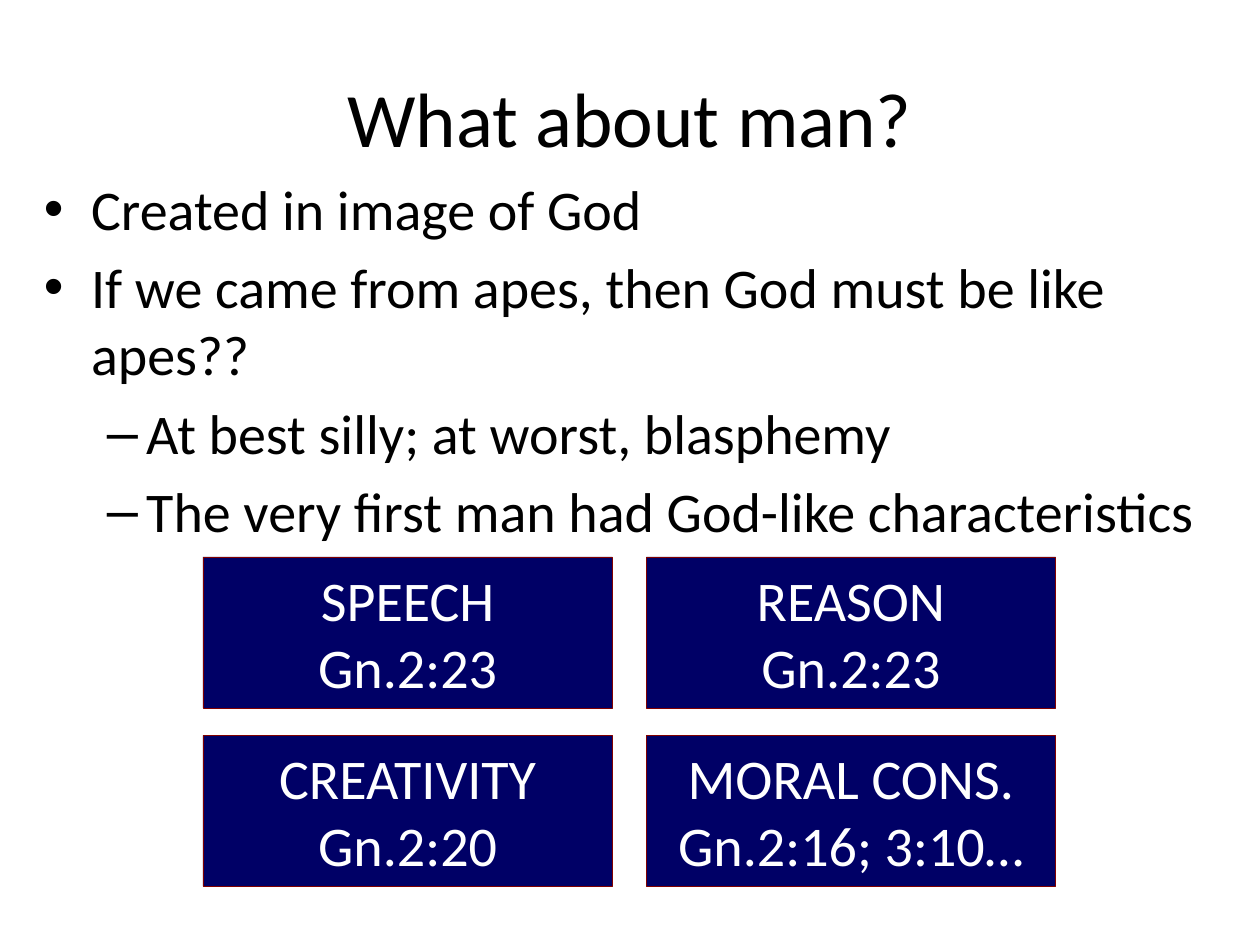
from lxml import etree
from pptx import Presentation
from pptx.dml.color import RGBColor
from pptx.enum.shapes import MSO_SHAPE
from pptx.enum.text import MSO_ANCHOR as ANCHOR, PP_ALIGN as ALIGN
from pptx.oxml.ns import qn
from pptx.util import Pt

COLORS = {"text": "000000", "box": "000066", "edge": "800000", "box_text": "FFFFFF"}
FONT = "Calibri"
# level: (bullet, left margin, hanging indent)
BULLETS = {0: ("•", 27, -27), 1: ("–", 58.5, -22.5)}


def write(tf, lines, size=32, color="text", align=ALIGN.CENTER, anchor=ANCHOR.MIDDLE,
          levels=None):
    """Fill a text frame, one paragraph a line; levels turns on bullets."""
    tf.word_wrap = True
    tf.vertical_anchor = anchor
    for i, line in enumerate(lines):
        p = tf.paragraphs[0] if i == 0 else tf.add_paragraph()
        p.alignment = align
        if levels:
            p.level = levels[i]
            bullet, margin, indent = BULLETS[levels[i]]
            pPr = p._p.get_or_add_pPr()
            pPr.set("marL", str(Pt(margin)))
            pPr.set("indent", str(Pt(indent)))
            etree.SubElement(pPr, qn("a:buFont"), typeface="Arial")
            etree.SubElement(pPr, qn("a:buChar"), char=bullet)
            p.space_before = Pt(0 if i == 0 else size * 0.2)
        r = p.add_run()
        r.text = line
        r.font.name = FONT
        r.font.size = Pt(size)
        r.font.color.rgb = RGBColor.from_string(COLORS[color])


prs = Presentation()
prs.slide_width, prs.slide_height = Pt(720), Pt(540)
s = prs.slides.add_slide(prs.slide_layouts[6])

title = s.shapes.add_textbox(Pt(36), Pt(21.6), Pt(648), Pt(90))
write(title.text_frame, ["What about man?"], size=44)

body = s.shapes.add_textbox(Pt(18), Pt(96), Pt(684), Pt(408))
write(body.text_frame, [
    "Created in image of God",
    "If we came from apes, then God must be like apes??",
    "At best silly; at worst, blasphemy",
    "The very first man had God-like characteristics",
], align=ALIGN.LEFT, anchor=ANCHOR.TOP, levels=[0, 0, 1, 1])

traits = [
    ("SPEECH", "Gn.2:23"), ("REASON", "Gn.2:23"),
    ("CREATIVITY", "Gn.2:20"), ("MORAL CONS.", "Gn.2:16; 3:10…"),
]
for i, trait in enumerate(traits):
    row, col = divmod(i, 2)
    sp = s.shapes.add_shape(MSO_SHAPE.RECTANGLE, Pt(116 + col * 253.3),
                            Pt(318.2 + row * 102), Pt(234), Pt(86.4))
    sp.shadow.inherit = False
    sp.fill.solid()
    sp.fill.fore_color.rgb = RGBColor.from_string(COLORS["box"])
    sp.line.color.rgb = RGBColor.from_string(COLORS["edge"])
    sp.line.width = Pt(0.25)
    write(sp.text_frame, trait, color="box_text")

prs.save("out.pptx")
